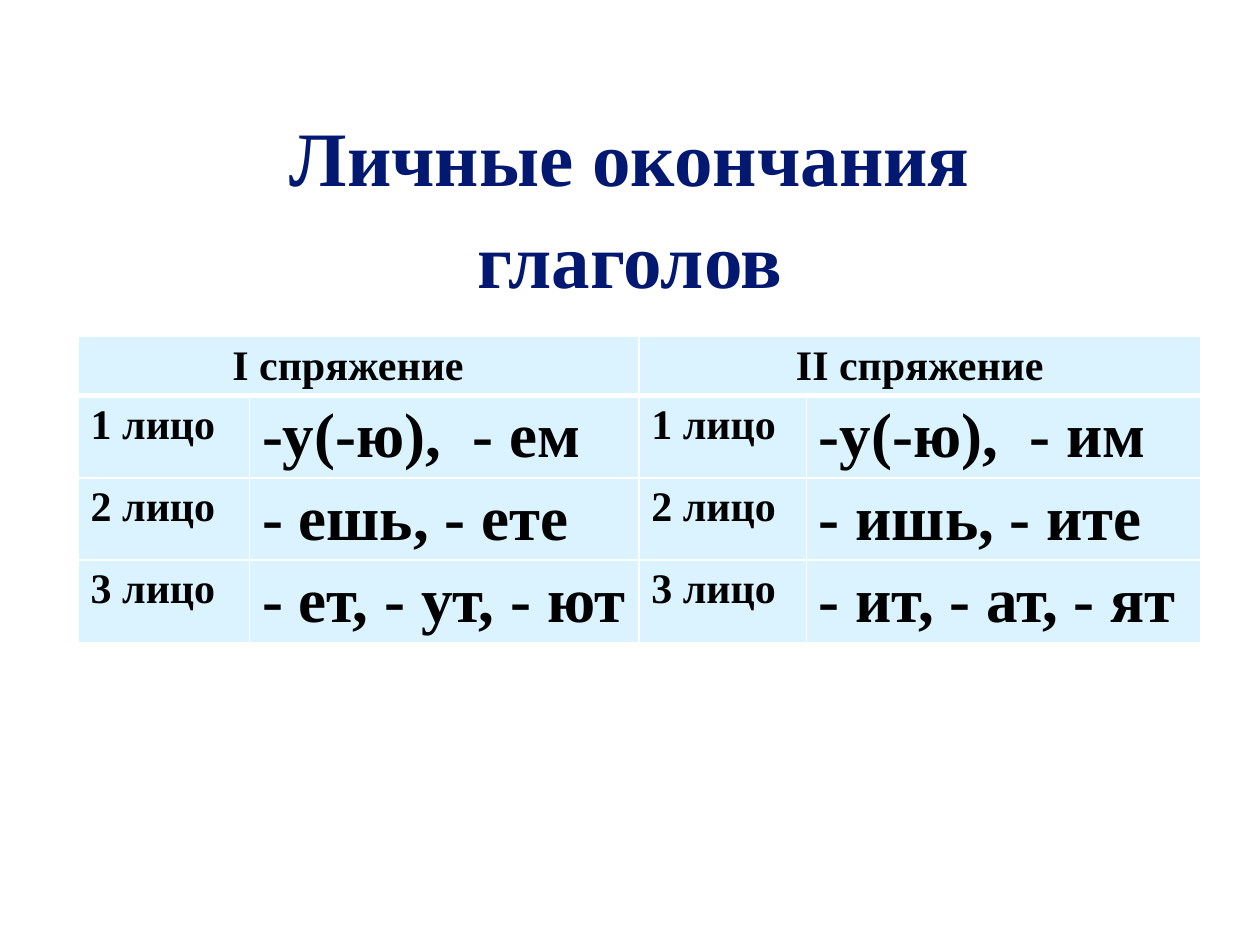
from pptx import Presentation
from pptx.dml.color import RGBColor
from pptx.enum.text import MSO_ANCHOR, PP_ALIGN
from pptx.oxml.ns import qn
from pptx.util import Pt
from lxml.etree import SubElement

FONT = "Times New Roman"
COLORS = {"title": "031871", "text": "000000", "cell": "DAF3FF", "border": "FFFFFF"}
COLUMN_WIDTHS = [97.92, 222.48, 95.76, 225.36]
HEADER_HEIGHT, ROW_HEIGHT = 33.5, 47
CELL_MARGIN = 7.2
ENDINGS = [
    ["1 лицо", "-у(-ю),  - ем", "1 лицо", "-у(-ю),  - им"],
    ["2 лицо", "- ешь, - ете", "2 лицо", "- ишь, - ите"],
    ["3 лицо", "- ет, - ут, - ют", "3 лицо", "- ит, - ат, - ят"],
]


def write_text(frame, text, size, color="text", align=PP_ALIGN.LEFT, spacing=None):
    para = frame.paragraphs[0]
    para.alignment = align
    para.line_spacing = spacing
    span = para.add_run()
    span.text = text
    span.font.name = FONT
    span.font.size = Pt(size)
    span.font.bold = True
    span.font.color.rgb = RGBColor.from_string(COLORS[color])


def add_title(page, text):
    title = page.shapes.title
    title.left, title.top, title.width, title.height = Pt(72), Pt(73.44), Pt(576), Pt(84.24)
    title.text_frame.word_wrap = True
    title.text_frame.vertical_anchor = MSO_ANCHOR.MIDDLE
    write_text(title.text_frame, text, 44, color="title", align=PP_ALIGN.CENTER, spacing=1.1)


def style_cell(cell, bottom=1):
    """Draw white borders around the cell and fill it; bottom is a line width."""
    properties = cell._tc.get_or_add_tcPr()
    for side, width in {"L": 1, "R": 1, "T": 1, "B": bottom}.items():
        line = SubElement(properties, qn(f"a:ln{side}"), w=str(Pt(width)))
        fill = SubElement(line, qn("a:solidFill"))
        SubElement(fill, qn("a:srgbClr"), val=COLORS["border"])
    cell.fill.solid()
    cell.fill.fore_color.rgb = RGBColor.from_string(COLORS["cell"])


def add_header(table, column, text, right_margin=CELL_MARGIN):
    """Write a heading over two columns."""
    pair = [table.cell(0, column), table.cell(0, column + 1)]
    pair[0].merge(pair[1])
    for cell in pair:
        style_cell(cell, bottom=3)
    pair[0].margin_right = Pt(right_margin)
    write_text(pair[0].text_frame, text, 24, align=PP_ALIGN.CENTER)


def add_endings_table(page):
    heights = [HEADER_HEIGHT] + [ROW_HEIGHT] * len(ENDINGS)
    table = page.shapes.add_table(
        len(heights), len(COLUMN_WIDTHS), Pt(44.64), Pt(192.24),
        Pt(sum(COLUMN_WIDTHS)), Pt(sum(heights)),
    ).table
    for column, width in zip(table.columns, COLUMN_WIDTHS):
        column.width = Pt(width)
    for row, height in zip(table.rows, heights):
        row.height = Pt(height)

    add_header(table, 0, "I спряжение", right_margin=CELL_MARGIN + 12)
    add_header(table, 2, "II спряжение")
    for row, texts in enumerate(ENDINGS, start=1):
        for column, text in enumerate(texts):
            cell = table.cell(row, column)
            style_cell(cell)
            write_text(cell.text_frame, text, 36 if column % 2 else 24)


def main():
    deck = Presentation()
    deck.slide_width, deck.slide_height = Pt(720), Pt(540)
    page = deck.slides.add_slide(deck.slide_layouts[5])
    add_title(page, "Личные окончания глаголов")
    add_endings_table(page)
    deck.save("out.pptx")


if __name__ == "__main__":
    main()
